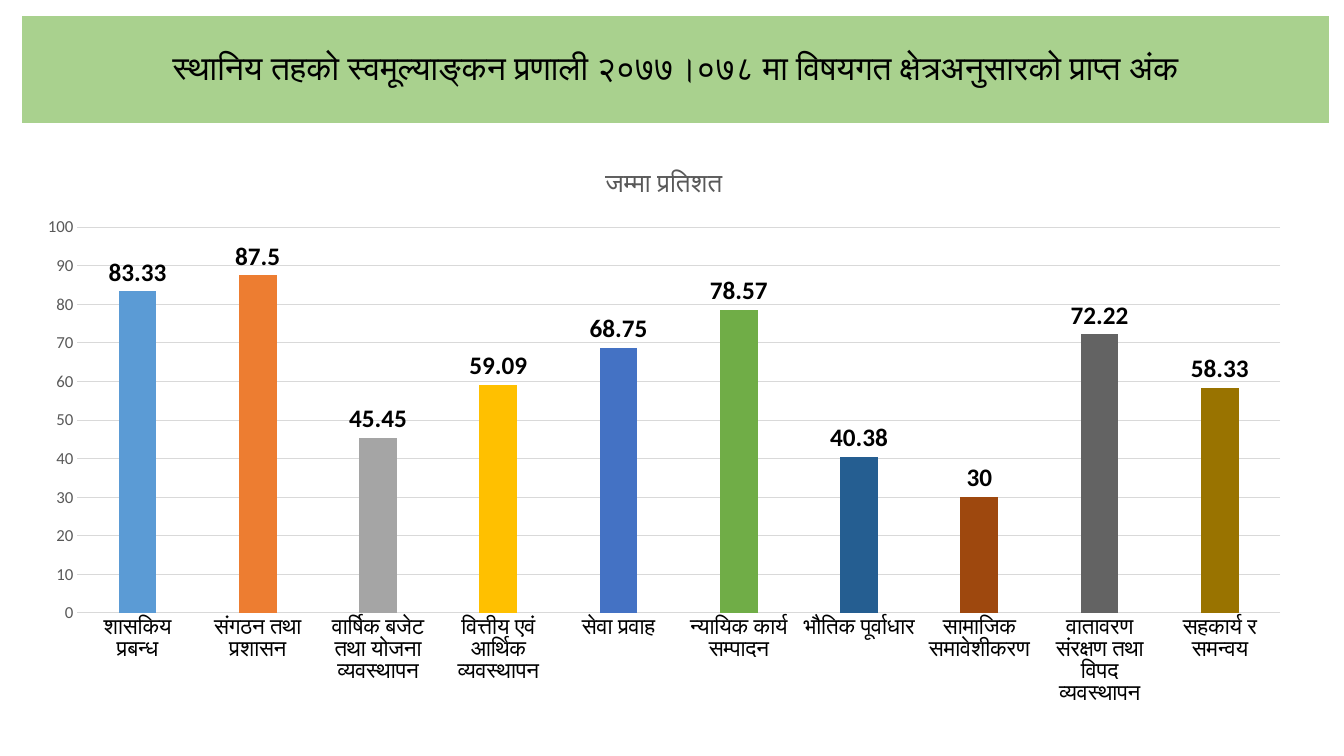
from pptx import Presentation
from pptx.chart.data import CategoryChartData
from pptx.dml.color import RGBColor
from pptx.enum.chart import XL_CHART_TYPE, XL_LABEL_POSITION, XL_TICK_MARK
from pptx.enum.shapes import MSO_SHAPE
from pptx.enum.text import MSO_ANCHOR, PP_ALIGN
from pptx.util import Inches, Pt

COLUMN = XL_CHART_TYPE.COLUMN_CLUSTERED
OUTSIDE = XL_LABEL_POSITION.OUTSIDE_END
NO_TICK = XL_TICK_MARK.NONE
RECT = MSO_SHAPE.RECTANGLE
MIDDLE = MSO_ANCHOR.MIDDLE
CENTER = PP_ALIGN.CENTER

FONT = "Calibri"
BLACK, GRAY, PALE, GREEN = "000000", "595959", "D9D9D9", "A9D18E"
HEADING = "स्थानिय तहको स्वमूल्याङ्कन प्रणाली २०७७।०७८ मा विषयगत क्षेत्रअनुसारको प्राप्त अंक"
SERIES = "जम्मा प्रतिशत"
SCORES = [
    ("शासकिय प्रबन्ध", 83.33, "5B9BD5"),
    ("संगठन तथा प्रशासन", 87.5, "ED7D31"),
    ("वार्षिक बजेट तथा योजना व्यवस्थापन", 45.45, "A5A5A5"),
    ("वित्तीय एवं आर्थिक व्यवस्थापन", 59.09, "FFC000"),
    ("सेवा प्रवाह", 68.75, "4472C4"),
    ("न्यायिक कार्य सम्पादन", 78.57, "70AD47"),
    ("भौतिक पूर्वाधार", 40.38, "255E91"),
    ("सामाजिक समावेशीकरण", 30, "9E480E"),
    ("वातावरण संरक्षण तथा विपद व्यवस्थापन", 72.22, "636363"),
    ("सहकार्य र समन्वय", 58.33, "997300"),
]
BANNER = (0.22, 0.16, 12.96, 1.06)
PLOT = (0.22, 1.46, 12.73, 5.65)


def paint(fill, color):
    fill.solid()
    fill.fore_color.rgb = RGBColor.from_string(color)


def style(font, size, color, bold=False):
    font.name, font.size, font.bold = FONT, Pt(size), bold
    font.color.rgb = RGBColor.from_string(color)


def rule(line):
    """Thin pale line, used for the base axis and the grid."""
    paint(line.fill, PALE)
    line.width = Pt(0.75)


def add_banner(slide):
    box = slide.shapes.add_shape(RECT, *map(Inches, BANNER))
    box.shadow.inherit = False
    paint(box.fill, GREEN)
    box.line.fill.background()
    frame = box.text_frame
    frame.word_wrap = True
    frame.vertical_anchor = MIDDLE
    frame.text = HEADING
    para = frame.paragraphs[0]
    para.alignment, para.line_spacing = CENTER, 0.9
    style(para.runs[0].font, 24, BLACK)


def add_scores(slide):
    names, values, colors = zip(*SCORES)
    data = CategoryChartData()
    data.categories = names
    data.add_series(SERIES, values)
    chart = slide.shapes.add_chart(COLUMN, *map(Inches, PLOT), data).chart
    style(chart.font, 10, BLACK)
    chart.has_legend = False
    chart.has_title = True
    title = chart.chart_title.text_frame
    title.text = SERIES
    style(title.paragraphs[0].runs[0].font, 18.6, GRAY)

    base, scale = chart.category_axis, chart.value_axis
    for axis, size, color in ((base, 16, BLACK), (scale, 12, GRAY)):
        axis.major_tick_mark = axis.minor_tick_mark = NO_TICK
        style(axis.tick_labels.font, size, color)
    rule(base.format.line)
    scale.format.line.fill.background()
    scale.minimum_scale, scale.maximum_scale, scale.major_unit = 0, 100, 10
    rule(scale.major_gridlines.format.line)

    plot = chart.plots[0]
    plot.gap_width, plot.overlap, plot.vary_by_categories = 219, -27, True
    bars = plot.series[0]
    for i, color in enumerate(colors):
        paint(bars.points[i].format.fill, color)
    labels = bars.data_labels
    labels.show_value = True
    labels.position = OUTSIDE
    style(labels.font, 18, BLACK, bold=True)


def main():
    deck = Presentation()
    deck.slide_width, deck.slide_height = Inches(13.33), Inches(7.5)
    slide = deck.slides.add_slide(deck.slide_layouts[6])
    add_banner(slide)
    add_scores(slide)
    deck.save("out.pptx")


if __name__ == "__main__":
    main()
